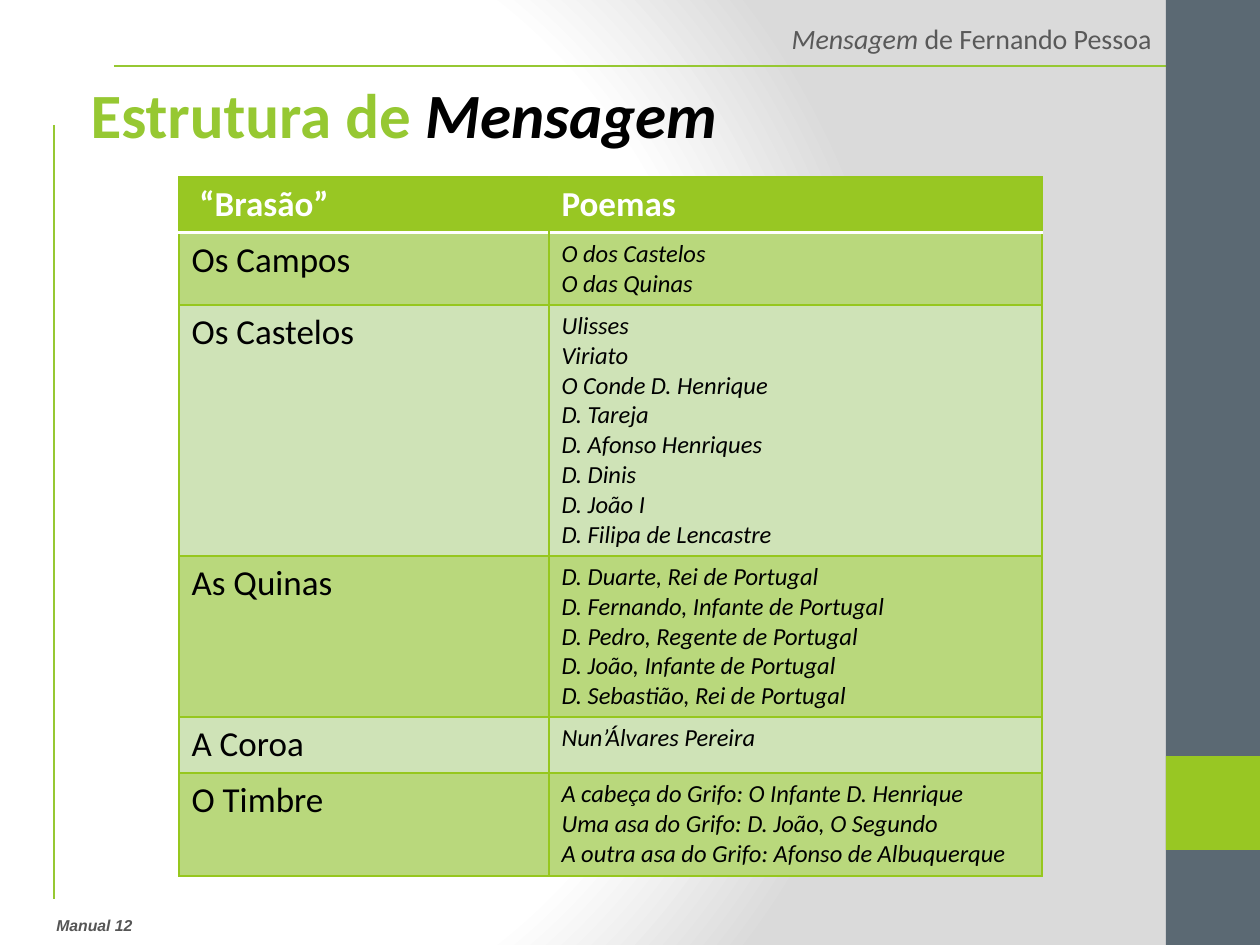
from lxml import etree
from pptx import Presentation
from pptx.dml.color import RGBColor
from pptx.enum.shapes import MSO_CONNECTOR, MSO_SHAPE
from pptx.enum.text import MSO_ANCHOR, PP_ALIGN
from pptx.oxml import parse_xml
from pptx.oxml.ns import nsdecls, qn
from pptx.util import Emu, Pt

LINE = MSO_CONNECTOR.STRAIGHT
RECT = MSO_SHAPE.RECTANGLE
TOP = MSO_ANCHOR.TOP
LEFT, RIGHT = PP_ALIGN.LEFT, PP_ALIGN.RIGHT
SCALE = 914400 / 126
THEME = {
    "font": "Calibri", "foot_font": "Arial",
    "lime": "98C723", "rule": "96C832", "edge": "96C71E",
    "slate": "5B6973", "band": "B9D87C", "pale": "CFE3B7",
    "white": "FFFFFF", "black": "000000", "gray": "DADADA",
    "head": "595959", "foot": "555555",
    "title_size": 36, "label_size": 20, "poem_size": 14,
    "head_size": 16, "foot_size": 9,
}


def px(*nums):
    return [Emu(round(n * SCALE)) for n in nums]


def style(para, size, color, bold=False, italic=False, font="font"):
    for run in para.runs:
        face = run.font
        face.name = THEME[font]
        face.size = Pt(THEME[size])
        face.color.rgb = RGBColor.from_string(THEME[color])
        face.bold, face.italic = bold, italic


deck = Presentation()
deck.slide_width, deck.slide_height = px(1260, 945)
slide = deck.slides.add_slide(deck.slide_layouts[5])
shapes = slide.shapes

slide.background.fill.solid()
back = slide.background.fill._xPr
back.remove(back.find(qn("a:solidFill")))
stops = "".join(
    f'<a:gs pos="{spot}000"><a:srgbClr val="{THEME[name]}"/></a:gs>'
    for spot, name in ((0, "white"), (75, "white"), (100, "gray")))
back.insert(0, parse_xml(
    f'<a:gradFill {nsdecls("a")} rotWithShape="1"><a:gsLst>{stops}</a:gsLst>'
    '<a:path path="circle"><a:fillToRect l="20000" t="50000" r="100000" b="50000"/>'
    '</a:path></a:gradFill>'))

for ends in ((114, 66, 1196, 66), (54, 125, 54, 899)):
    rule = shapes.add_connector(LINE, *px(*ends))
    rule.line.color.rgb = RGBColor.from_string(THEME["rule"])
    rule.line.width = Pt(1)
    etree.SubElement(rule._element.spPr, qn("a:effectLst"))

for spot, color in (((1166, 0, 94, 945), "slate"), ((1166, 756, 94, 94), "lime")):
    bar = shapes.add_shape(RECT, *px(*spot))
    bar.shadow.inherit = False
    bar.fill.solid()
    bar.fill.fore_color.rgb = RGBColor.from_string(THEME[color])
    bar.line.fill.background()

foot = shapes.add_textbox(*px(44, 910, 716, 32)).text_frame
foot.word_wrap = True
foot.text = "Manual 12"
style(foot.paragraphs[0], "foot_size", "foot", True, True, "foot_font")

head = shapes.add_textbox(*px(113, 15, 1051, 47)).text_frame
head.word_wrap = True
para = head.paragraphs[0]
para.alignment = RIGHT
for text in ("Mensagem ", "de Fernando Pessoa"):
    para.add_run().text = text
style(para, "head_size", "head")
para.runs[0].font.italic = True

title = shapes.title
title.left, title.top, title.width, title.height = px(78, 69, 1091, 89)
title.text_frame.vertical_anchor = TOP
para = title.text_frame.paragraphs[0]
para.alignment = LEFT
for text in ("Estrutura de ", "Mensagem"):
    para.add_run().text = text
style(para, "title_size", "rule", True)
para.runs[1].font.italic = True
para.runs[1].font.color.rgb = RGBColor.from_string(THEME["black"])

rows = [
    (56, " “Brasão”", ["Poemas"]),
    (72, "Os Campos", ["O dos Castelos", "O das Quinas"]),
    (251, "Os Castelos", [
        "Ulisses", "Viriato", "O Conde D. Henrique", "D. Tareja",
        "D. Afonso Henriques", "D. Dinis", "D. João I", "D. Filipa de Lencastre"]),
    (161, "As Quinas", [
        "D. Duarte, Rei de Portugal", "D. Fernando, Infante de Portugal",
        "D. Pedro, Regente de Portugal", "D. João, Infante de Portugal",
        "D. Sebastião, Rei de Portugal"]),
    (56, "A Coroa", ["Nun’Álvares Pereira"]),
    (103, "O Timbre", [
        "A cabeça do Grifo: O Infante D. Henrique",
        "Uma asa do Grifo: D. João, O Segundo",
        "A outra asa do Grifo: Afonso de Albuquerque"]),
]
high = sum(row[0] for row in rows)
table = shapes.add_table(len(rows), 2, *px(179, 177, 863, high)).table
for col, wide in zip(table.columns, px(370, 493)):
    col.width = wide

for r, (tall, label, poems) in enumerate(rows):
    table.rows[r].height = px(tall)[0]
    fill = "lime" if r == 0 else "band" if r % 2 else "pale"
    for c, lines in enumerate(([label], poems)):
        cell = table.cell(r, c)
        cell.text = "\n".join(lines)
        for para in cell.text_frame.paragraphs:
            if r == 0:
                style(para, "label_size", "white", True)
            elif c == 0:
                style(para, "label_size", "black")
            else:
                style(para, "poem_size", "black", italic=True)
        cell.fill.solid()
        cell.fill.fore_color.rgb = RGBColor.from_string(THEME[fill])
        props = cell._tc.get_or_add_tcPr()
        for i, side in enumerate("LRTB"):
            color, width = THEME["edge"], Pt(1)
            if (r, side) in ((0, "B"), (1, "T")):
                color, width = THEME["white"], Pt(2)
            elif r == 0 and (c, side) in ((0, "R"), (1, "L")):
                color = THEME["lime"]
            props.insert(i, parse_xml(
                f'<a:ln{side} {nsdecls("a")} w="{width}"><a:solidFill>'
                f'<a:srgbClr val="{color}"/></a:solidFill></a:ln{side}>'))

deck.save("out.pptx")
